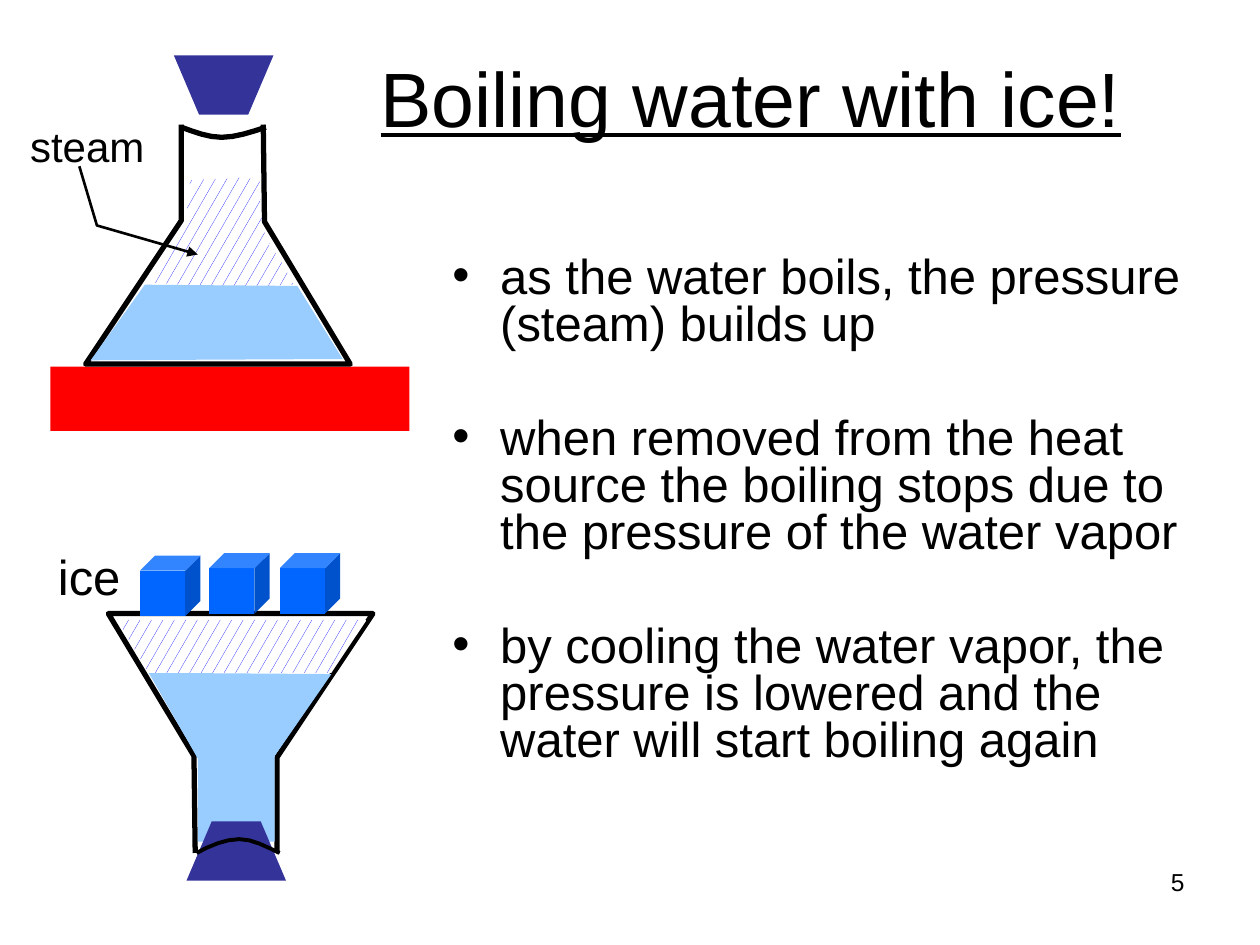
import pptx
import pptx.util
import pptx.dml.color
import pptx.enum.dml
import pptx.enum.shapes
import pptx.enum.text
import pptx.oxml
import pptx.oxml.ns

Inches = pptx.util.Inches
Pt = pptx.util.Pt
RGBColor = pptx.dml.color.RGBColor
Align = pptx.enum.text.PP_ALIGN
Anchor = pptx.enum.text.MSO_ANCHOR
Preset = pptx.enum.shapes.MSO_SHAPE

BLACK = RGBColor(0x00, 0x00, 0x00)
WHITE = RGBColor(0xFF, 0xFF, 0xFF)
RED = RGBColor(0xFF, 0x00, 0x00)
STEAM_BLUE = RGBColor(0x00, 0x00, 0xFF)
STOPPER_BLUE = RGBColor(0x33, 0x33, 0x99)
WATER_BLUE = RGBColor(0x99, 0xCC, 0xFF)
ICE_BLUE = RGBColor(0x00, 0x66, 0xFF)

TITLE = "Boiling water with ice!"
POINTS = [
    "as the water boils, the pressure (steam) builds up",
    "when removed from the heat source the boiling stops due to the pressure of the water vapor",
    "by cooling the water vapor, the pressure is lowered and the water will start boiling again",
]
LABELS = [
    ("5", (7.17, 6.83, 2.33, 0.52), 14, Align.RIGHT, 0.1),
    ("ice", (0.46, 4.34, 0.5, 0.47), 28, Align.LEFT, 0),
    ("steam", (0.14, 0.91, 1.11, 0.5), 24, Align.LEFT, 0.1),
]

STEAM_START = (1.51, 1.43)
STEAM_CURVES = [
    ((1.59, 1.39), (1.81, 1.41), (1.91, 1.41)),
    ((2, 1.41), (2.03, 1.36), (2.06, 1.42)),
    ((2.09, 1.49), (2.07, 1.72), (2.08, 1.81)),
    ((2.09, 1.82), (2.15, 1.94), (2.16, 1.95)),
    ((2.17, 1.98), (2.08, 1.87), (2.09, 1.89)),
    ((2.1, 1.9), (2.18, 1.99), (2.22, 2.05)),
    ((2.23, 2.07), (2.34, 2.24), (2.33, 2.26)),
    ((2.31, 2.28), (2.14, 2.26), (2.11, 2.27)),
    ((2.1, 2.28), (1.9, 2.29), (1.9, 2.29)),
    ((1.68, 2.28), (1.23, 2.44), (1.17, 2.24)),
    ((1.18, 2.14), (1.32, 1.96), (1.41, 1.94)),
    ((1.41, 1.87), (1.44, 1.79), (1.48, 1.71)),
    ((1.5, 1.62), (1.43, 1.47), STEAM_START),
]
UPPER_RIM = [((1.55, 1.05), (1.65, 1.09), (1.76, 1.09)),
             ((1.87, 1.09), (1.99, 1.05), (2.11, 1.01))]
LOWER_RIM = [((1.67, 6.71), (1.79, 6.66), (1.9, 6.66)),
             ((2.01, 6.66), (2.11, 6.72), (2.22, 6.77))]
STOPPER = [(1.38, 0.44), (1.58, 0.91), (1.97, 0.91), (2.17, 0.44)]
FLASK = [(1.44, 0.99), (1.44, 1.75), (0.68, 2.89), (2.78, 2.89), (2.1, 1.76), (2.09, 0.99)]
UPPER_WATER = [(1.15, 2.26), (2.36, 2.27), (2.72, 2.85), (0.72, 2.86)]
LOWER_WATER = [(1.18, 5.34), (2.63, 5.35), (2.18, 6), (2.18, 6.68), (1.57, 6.68), (1.57, 6.02)]
LOWER_STEAM = [(0.93, 4.92), (2.91, 4.92), (2.63, 5.34), (1.18, 5.34)]
STEAM_POINTER = [(0.63, 1.32), (0.77, 1.79), (1.57, 2.02)]
HEATER = (0.4, 2.91, 2.85, 0.51)
ICE_CUBES = [(1.11, 4.41), (1.66, 4.39), (2.22, 4.39)]
ICE_SIZE = 0.48


def place(shape, area):
    shape.left, shape.top, shape.width, shape.height = map(Inches, area)


def write(para, text, size):
    span = para.add_run()
    span.text = text
    span.font.name = "Arial"
    span.font.size = Pt(size)
    span.font.color.rgb = BLACK
    return span


def turned(points, center_x, center_y):
    return [(2 * center_x - x, 2 * center_y - y) for x, y in points]


def curve_points(start, curves, steps):
    points = [start]
    for first, second, end in curves:
        start = points[-1]
        for step in range(1, steps + 1):
            t = step / steps
            weights = ((1 - t) ** 3, 3 * t * (1 - t) ** 2, 3 * t * t * (1 - t), t ** 3)
            points.append(tuple(
                sum(weight * point[axis] for weight, point in zip(weights, (start, first, second, end)))
                for axis in (0, 1)))
    return points


def paint(shape, color):
    shape.shadow.inherit = False
    shape.line.fill.background()
    shape.fill.solid()
    shape.fill.fore_color.rgb = color


def outline(points, closed):
    corners = [(Inches(x), Inches(y)) for x, y in points]
    builder = page.shapes.build_freeform(*corners[0])
    builder.add_line_segments(corners[1:], close=closed)
    return builder.convert_to_shape()


def add_area(points, color):
    paint(outline(points, True), color)


def add_steam(points):
    shape = outline(points, True)
    paint(shape, WHITE)
    shape.fill.patterned()
    shape.fill.pattern = pptx.enum.dml.MSO_PATTERN.SMALL_CONFETTI
    shape.fill.fore_color.rgb = STEAM_BLUE
    shape.fill.back_color.rgb = WHITE


def add_stroke(points, width):
    shape = outline(points, False)
    shape.shadow.inherit = False
    shape.fill.background()
    shape.line.color.rgb = BLACK
    shape.line.width = Pt(width)
    return shape


def add_preset(kind, area, color):
    shape = page.shapes.add_shape(kind, *map(Inches, area))
    paint(shape, color)
    return shape


def set_bullet(para):
    properties = para._p.get_or_add_pPr()
    properties.set("marL", str(Inches(0.38)))
    properties.set("indent", str(-Inches(0.38)))
    bullet = pptx.oxml.parse_xml(f'<a:buChar {pptx.oxml.ns.nsdecls("a")} char="•"/>')
    properties.append(bullet)


deck = pptx.Presentation()
deck.slide_width, deck.slide_height = Inches(10), Inches(7.5)
page = deck.slides.add_slide(deck.slide_layouts[1])

title = page.shapes.title
place(title, (2.92, 0.25, 6.48, 1.03))
title.fill.solid()
title.fill.fore_color.rgb = WHITE
title.text_frame.vertical_anchor = Anchor.MIDDLE
title_para = title.text_frame.paragraphs[0]
title_para.alignment = Align.LEFT
write(title_para, TITLE, 44).font.underline = True

body = page.placeholders[1]
place(body, (3.49, 1.99, 6.21, 4.33))
body.text_frame.auto_size = pptx.enum.text.MSO_AUTO_SIZE.NONE
for index, point in enumerate(POINTS):
    para = body.text_frame.add_paragraph() if index else body.text_frame.paragraphs[0]
    para.line_spacing = 0.8
    para.space_before = Pt(38 if index else 5.6)
    set_bullet(para)
    write(para, point, 28)

for text, area, size, alignment, margin in LABELS:
    box = page.shapes.add_textbox(*map(Inches, area))
    frame = box.text_frame
    frame.word_wrap = alignment == Align.RIGHT
    frame.margin_left = frame.margin_right = Inches(margin)
    frame.margin_top = frame.margin_bottom = Inches(margin / 2)
    frame.paragraphs[0].alignment = alignment
    write(frame.paragraphs[0], text, size)

add_steam(curve_points(STEAM_START, STEAM_CURVES, 1))
add_area(STOPPER, STOPPER_BLUE)
add_preset(Preset.RECTANGLE, HEATER, RED)
add_stroke(FLASK, 3)
add_area(UPPER_WATER, WATER_BLUE)
add_stroke(curve_points((1.44, 1.01), UPPER_RIM, 4), 3)

pointer = add_stroke(STEAM_POINTER, 1.5)
pointer.line._get_or_add_ln().append(
    pptx.oxml.parse_xml(f'<a:tailEnd {pptx.oxml.ns.nsdecls("a")} type="triangle"/>'))

add_stroke(turned(FLASK, 1.82, 3.88), 3)
add_area(LOWER_WATER, WATER_BLUE)
add_steam(LOWER_STEAM)
add_area([(x + 0.1, 7.43 - y) for x, y in STOPPER], STOPPER_BLUE)
add_stroke(curve_points((1.56, 6.77), LOWER_RIM, 4), 2.25)

for left, top in ICE_CUBES:
    cube = add_preset(Preset.CUBE, (left, top, ICE_SIZE, ICE_SIZE), ICE_BLUE)
    cube.adjustments[0] = 0.25

deck.save("out.pptx")
